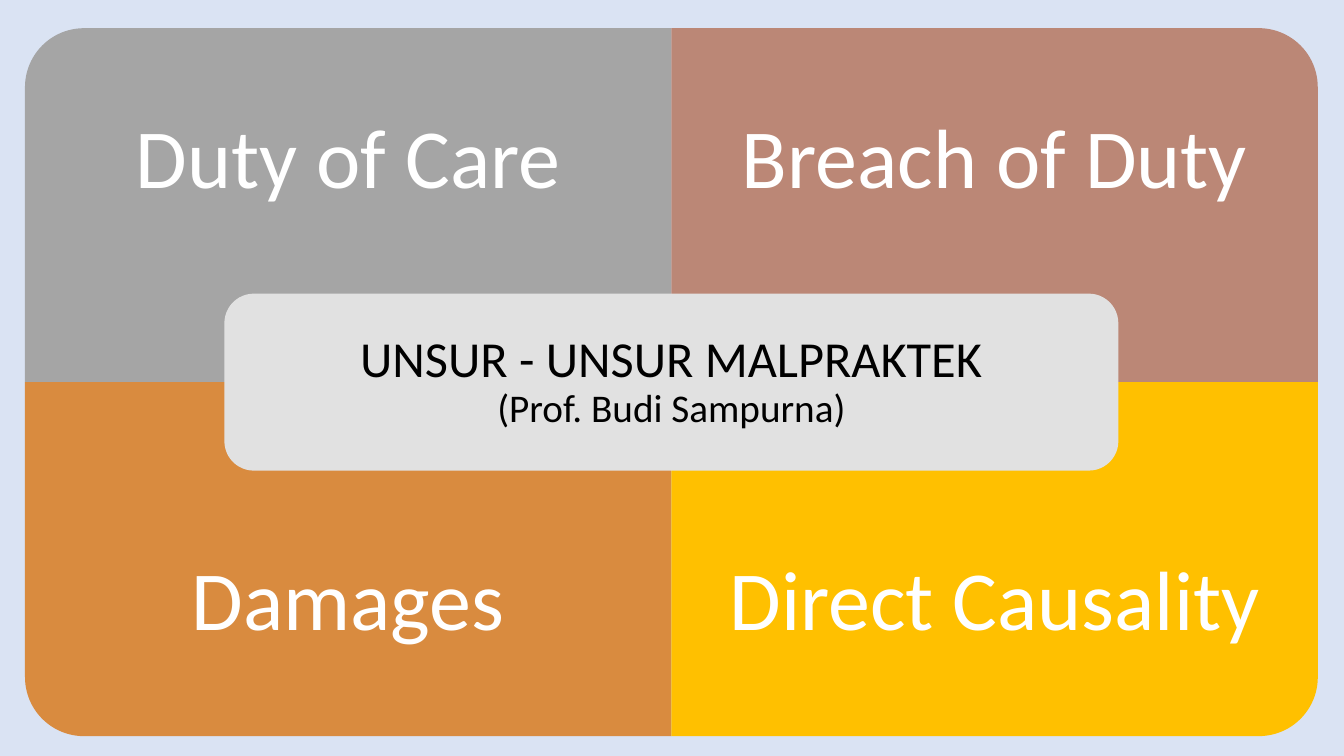
from dataclasses import dataclass

from pptx import Presentation
from pptx.dml.color import RGBColor
from pptx.enum.shapes import MSO_SHAPE
from pptx.enum.text import MSO_ANCHOR, PP_ALIGN
from pptx.util import Cm, Pt


@dataclass(frozen=True)
class Theme:
    font: str = "Calibri"
    background: str = "DAE3F3"
    duty: str = "A5A5A5"
    breach: str = "BB8776"
    damages: str = "D98B3F"
    causality: str = "FFC000"
    center: str = "E1E1E1"
    light: str = "FFFFFF"
    dark: str = "000000"
    element_size: int = 60
    title_size: int = 36
    source_size: int = 28


THEME = Theme()

# Label, fill, column, row, rotation that turns the round corner outwards
ELEMENTS = [
    ("Duty of Care", THEME.duty, 0, 0, 270),
    ("Breach of Duty", THEME.breach, 1, 0, 0),
    ("Damages", THEME.damages, 0, 1, 180),
    ("Direct Causality", THEME.causality, 1, 1, 90),
]


def write_text(shape, lines, color, inset):
    """Fill the shape with centred (text, size) lines."""
    frame = shape.text_frame
    frame.word_wrap = True
    frame.vertical_anchor = MSO_ANCHOR.MIDDLE
    frame.margin_left = frame.margin_right = inset
    frame.margin_top = frame.margin_bottom = inset
    for index, (text, size) in enumerate(lines):
        paragraph = frame.add_paragraph() if index else frame.paragraphs[0]
        paragraph.alignment = PP_ALIGN.CENTER
        paragraph.line_spacing = 0.9
        run = paragraph.add_run()
        run.text = text
        run.font.name = THEME.font
        run.font.size = Pt(size)
        run.font.color.rgb = RGBColor.from_string(color)


def add_panel(slide, preset, left, top, width, height, fill):
    panel = slide.shapes.add_shape(preset, left, top, width, height)
    panel.shadow.inherit = False
    panel.fill.solid()
    panel.fill.fore_color.rgb = RGBColor.from_string(fill)
    panel.line.fill.background()
    return panel


def add_quadrant(slide, left, top, width, height, label, fill, row, rotation):
    """Place a panel and its label, which keeps to the outer three quarters."""
    sideways = rotation % 180 == 90
    panel_width, panel_height = (height, width) if sideways else (width, height)
    panel = add_panel(slide, MSO_SHAPE.ROUND_1_RECTANGLE,
                      left + (width - panel_width) // 2,
                      top + (height - panel_height) // 2,
                      panel_width, panel_height, fill)
    panel.rotation = rotation

    label_height = height * 3 // 4
    label_top = top + row * (height - label_height)
    label_box = slide.shapes.add_textbox(left, label_top, width, label_height)
    write_text(label_box, [(label, THEME.element_size)],
               color=THEME.light, inset=Cm(1.19))


def add_matrix(slide, left, top, width, height):
    """Place four quadrants with the title panel over their meeting point."""
    column_width, row_height = width // 2, height // 2
    for label, fill, column, row, rotation in ELEMENTS:
        add_quadrant(slide, left + column * column_width, top + row * row_height,
                     column_width, row_height, label, fill, row, rotation)

    title_width, title_height = Cm(22.53), height // 4
    title = add_panel(slide, MSO_SHAPE.ROUNDED_RECTANGLE,
                      left + (width - title_width) // 2,
                      top + (height - title_height) // 2,
                      title_width, title_height, THEME.center)
    write_text(title, [("UNSUR - UNSUR MALPRAKTEK", THEME.title_size),
                       ("(Prof. Budi Sampurna)", THEME.source_size)],
               color=THEME.dark, inset=Cm(0.38))


def main():
    deck = Presentation()
    deck.slide_width, deck.slide_height = Cm(33.87), Cm(19.05)
    slide = deck.slides.add_slide(deck.slide_layouts[6])
    slide.background.fill.solid()
    slide.background.fill.fore_color.rgb = RGBColor.from_string(THEME.background)
    add_matrix(slide, Cm(0.63), Cm(0.71), Cm(32.58), Cm(17.84))
    deck.save("out.pptx")


if __name__ == "__main__":
    main()
